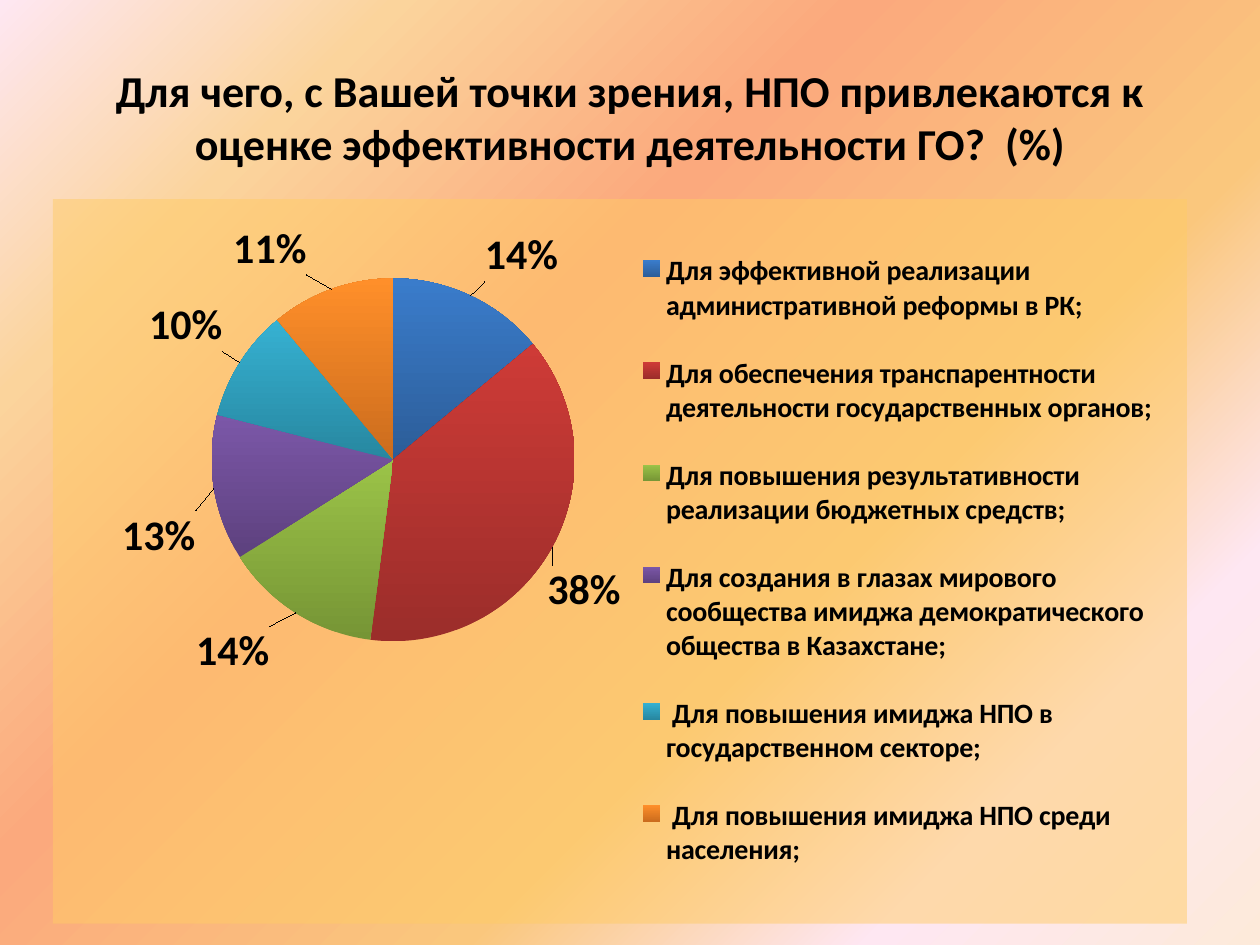
from lxml import etree
from pptx import Presentation
from pptx.chart.data import CategoryChartData
from pptx.dml.color import RGBColor
from pptx.enum import chart as charts, text
from pptx.oxml import ns, parse_xml
from pptx.util import Inches, Pt

FONT = "Calibri"
COLORS = {"text": "000000", "panel": "FFCC66"}
BACKGROUND = [(0, "FDEADA"), (18, "FEE7F2"), (36, "FAC77D"),
              (61, "FBA97D"), (82, "FBD49C"), (100, "FEE7F2")]
TITLE = ("Для чего, с Вашей точки зрения, НПО привлекаются к "
         "оценке эффективности деятельности ГО?  (%)")
# Answer, share, dark and light slice colour, label shift (share of chart size)
ANSWERS = [
    ("Для эффективной реализации административной реформы в РК;",
     14, "2C5D98", "3A7CCB", (0.01, -0.01)),
    ("Для обеспечения транспарентности деятельности государственных органов;",
     38, "9B2D2A", "CE3B37", (-0.01, 0.02)),
    ("Для повышения результативности реализации бюджетных средств;",
     14, "769535", "9BC348", (-0.02, 0.01)),
    ("Для создания в глазах мирового сообщества имиджа "
     "демократического общества в Казахстане;",
     13, "5D417E", "7B57A8", (-0.01, 0.03)),
    (" Для повышения имиджа НПО в государственном секторе;",
     10, "2787A0", "36B1D2", (-0.01, -0.01)),
    (" Для повышения имиджа НПО среди населения;",
     11, "CB6C1D", "FF8F2A", (-0.02, -0.01)),
]


def gradient(stops, angle):
    marks = "".join(f'<a:gs pos="{place * 1000}"><a:srgbClr val="{color}"/></a:gs>'
                    for place, color in stops)
    return parse_xml(f'<a:gradFill {ns.nsdecls("a")} rotWithShape="1">'
                     f'<a:gsLst>{marks}</a:gsLst>'
                     f'<a:lin ang="{angle * 60000}" scaled="0"/></a:gradFill>')


def replace_fill(fill, owner, new_fill):
    """Swap the solid fill of an element for a gradient."""
    fill.solid()
    fill.fore_color.rgb = RGBColor.from_string(COLORS["text"])
    old = owner.find(ns.qn("a:solidFill"))
    owner.replace(old, new_fill)


def layout(**values):
    """Manual chart layout, as shares of the chart's size."""
    root = etree.Element(ns.qn("c:layout"))
    manual = etree.SubElement(root, ns.qn("c:manualLayout"))
    for name, value in values.items():
        etree.SubElement(manual, ns.qn(f"c:{name}")).set("val", str(value))
    return root


def style(font, size, bold=True):
    font.name, font.size, font.bold = FONT, Pt(size), bold
    font.color.rgb = RGBColor.from_string(COLORS["text"])


def add_title(page, box):
    title = page.shapes.title
    title.left, title.top, title.width, title.height = box
    frame = title.text_frame
    frame.word_wrap = True
    frame.vertical_anchor = text.MSO_ANCHOR.MIDDLE
    para = frame.paragraphs[0]
    para.alignment = text.PP_ALIGN.CENTER
    span = para.add_run()
    span.text = TITLE
    style(span.font, 25.2)


def format_slice(point, dark, light, shift):
    fill = point.format.fill
    fill.solid()
    replace_fill(fill, point._element.xpath(
        f"c:dPt[c:idx/@val='{point._idx}']/c:spPr")[0],
        gradient([(0, dark), (100, light)], 270))
    label = point.data_label
    style(label.font, 24)
    label.position = charts.XL_LABEL_POSITION.OUTSIDE_END
    node = point._element.xpath(f"c:dLbls/c:dLbl[c:idx/@val='{point._idx}']")[0]
    node.find(ns.qn("c:showVal")).set("val", "0")
    node.find(ns.qn("c:showPercent")).set("val", "1")
    node.find(ns.qn("c:idx")).addnext(layout(x=shift[0], y=shift[1]))


def add_pie(page, box):
    data = CategoryChartData()
    data.categories = [answer[0] for answer in ANSWERS]
    data.add_series("Series 1", [answer[1] for answer in ANSWERS])
    chart = page.shapes.add_chart(charts.XL_CHART_TYPE.PIE, *box, data).chart
    chart.has_title = False
    style(chart.font, 10, False)

    # Half-transparent panel behind the chart
    chart._chartSpace.find(ns.qn("c:chart")).addnext(parse_xml(
        f'<c:spPr {ns.nsdecls("c", "a")}><a:solidFill>'
        f'<a:srgbClr val="{COLORS["panel"]}"><a:alpha val="50000"/></a:srgbClr>'
        '</a:solidFill><a:ln><a:noFill/></a:ln></c:spPr>'))

    # Slices and their percentages
    plot = chart.plots[0]
    plot.vary_by_categories = True
    series = plot.series[0]
    labels = series.data_labels
    labels.show_value, labels.show_percentage = False, True
    labels.position = charts.XL_LABEL_POSITION.OUTSIDE_END
    style(labels.font, 24)
    for index, (_, _, dark, light, shift) in enumerate(ANSWERS):
        format_slice(series.points[index], dark, light, shift)

    # Legend
    chart.has_legend = True
    legend = chart.legend
    legend.position = charts.XL_LEGEND_POSITION.LEFT
    legend.include_in_layout = False
    style(legend.font, 16)
    place_part(legend._element, layout(
        xMode="edge", yMode="edge", x=0.51, y=0.03, w=0.47, h=0.94),
        "c:legendPos")

    # Pie circle
    area = chart._chartSpace.xpath("c:chart/c:plotArea")[0]
    place_part(area, layout(layoutTarget="inner", xMode="edge", yMode="edge",
                            x=0.14, y=0.07, w=0.32, h=0.58))


def place_part(node, new_layout, after=None):
    old = node.find(ns.qn("c:layout"))
    if old is not None:
        node.remove(old)
    if after:
        node.find(ns.qn(after)).addnext(new_layout)
    else:
        node.insert(0, new_layout)


def main():
    deck = Presentation()
    deck.slide_width, deck.slide_height = Inches(10), Inches(7.5)
    page = deck.slides.add_slide(deck.slide_layouts[5])
    fill = page.background.fill
    fill.solid()
    replace_fill(fill, page._element.xpath("p:cSld/p:bg/p:bgPr")[0],
                 gradient(BACKGROUND, 225))
    add_title(page, [Inches(n) for n in (0.5, 0.3, 9, 1.25)])
    add_pie(page, [Inches(n) for n in (0.42, 1.58, 9, 5.75)])
    deck.save("out.pptx")


if __name__ == "__main__":
    main()
